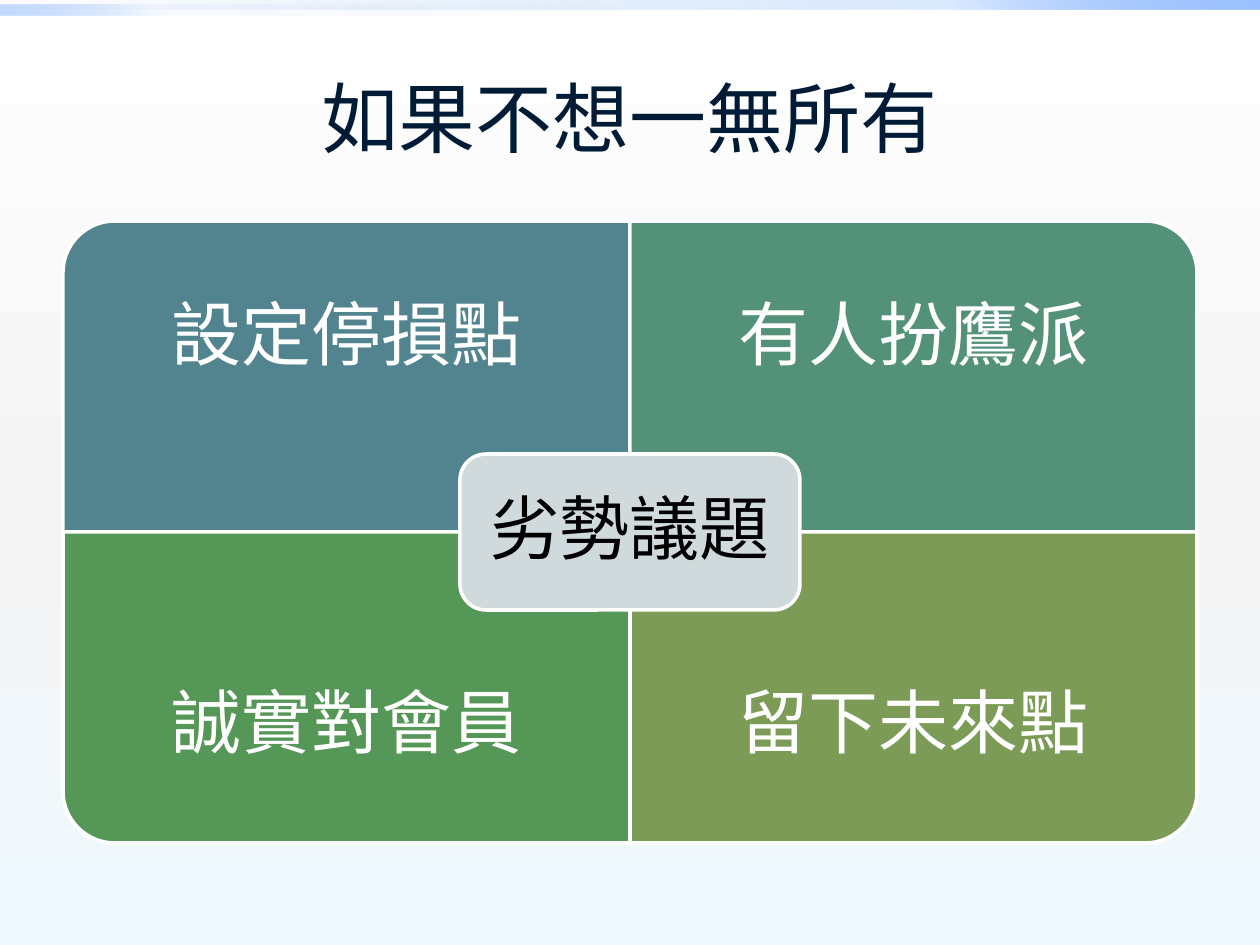
"""Build a slide with a titled four-quadrant matrix around a central topic."""
from lxml.etree import SubElement
from pptx import Presentation
from pptx.dml.color import RGBColor
from pptx.enum.shapes import MSO_SHAPE as SHAPE
from pptx.enum.text import MSO_ANCHOR as ANCHOR, PP_ALIGN as ALIGN
from pptx.oxml.ns import qn
from pptx.util import Pt

PX = 914400 // 126
WHITE = RGBColor(0xFF, 0xFF, 0xFF)
BLACK = RGBColor(0x00, 0x00, 0x00)
NAVY = RGBColor(0x00, 0x1B, 0x36)
GREY = RGBColor(0xF4, 0xF4, 0xF4)
ICE = RGBColor(0xEE, 0xF9, 0xFF)
DEEP = RGBColor(0x00, 0x58, 0xB7)
BLUE = RGBColor(0x4F, 0x95, 0xFF)
SKY = RGBColor(0x9E, 0xC2, 0xFF)
TEAL = RGBColor(0x51, 0x84, 0x8E)
SEA = RGBColor(0x53, 0x92, 0x79)
GREEN = RGBColor(0x55, 0x97, 0x57)
OLIVE = RGBColor(0x7B, 0x9B, 0x57)
SILVER = RGBColor(0xD0, 0xD9, 0xDB)

TITLE = "如果不想一無所有"
TOPIC = "劣勢議題"
QUADRANTS = [
    ("設定停損點", TEAL, 270),
    ("有人扮鷹派", SEA, 0),
    ("誠實對會員", GREEN, 180),
    ("留下未來點", OLIVE, 90),
]
BACKDROP = [(0, WHITE, 100), (55, GREY, 100), (100, ICE, 100)]
STRIPS = [
    ((0, 0, 1260, 10), [(0, DEEP, 0), (75, BLUE, 20), (100, SKY, 100)], 315),
    ((0, 5, 630, 10), [(0, DEEP, 0), (75, BLUE, 5), (100, SKY, 60)], 135),
]
LEFT, TOP, QUAD_W, QUAD_H = 63, 221, 567, 311
LABEL_H = 234
TOPIC_W, TOPIC_H = 340, 156


def emu(*lengths):
    return [round(length * PX) for length in lengths]


def set_gradient(fill, element, stops, angle):
    fill.gradient()
    grad = next(element.iter(qn("a:gradFill")))
    grad.find(qn("a:lin")).set("ang", str(angle * 60000))
    stop_list = grad.find(qn("a:gsLst"))
    stop_list.clear()
    for pos, color, alpha in stops:
        gs = SubElement(stop_list, qn("a:gs"), pos=str(pos * 1000))
        clr = SubElement(gs, qn("a:srgbClr"), val=str(color))
        SubElement(clr, qn("a:alpha"), val=str(alpha * 1000))


def add_block(s, kind, box, color, rotation=0):
    sp = s.shapes.add_shape(kind, *emu(*box))
    sp.shadow.inherit = False
    sp.rotation = rotation
    sp.fill.solid()
    sp.fill.fore_color.rgb = color
    sp.line.color.rgb = WHITE
    sp.line.width = Pt(2)
    return sp


def write(sp, text, font, size, color, inset, spacing):
    tf = sp.text_frame
    tf.word_wrap = True
    tf.vertical_anchor = ANCHOR.MIDDLE
    tf.margin_left = tf.margin_right = tf.margin_top = tf.margin_bottom = inset * PX
    tf.text = text
    p = tf.paragraphs[0]
    p.alignment = ALIGN.CENTER
    p.line_spacing = spacing
    r = p.runs[0]
    r.font.name = font
    r.font.size = Pt(size)
    r.font.color.rgb = color


def main():
    prs = Presentation()
    prs.slide_width, prs.slide_height = emu(1260, 945)
    s = prs.slides.add_slide(prs.slide_layouts[5])
    set_gradient(s.background.fill, s.element, BACKDROP, 90)

    for box, stops, angle in STRIPS:
        sp = s.shapes.add_shape(SHAPE.RECTANGLE, *emu(*box))
        sp.shadow.inherit = False
        sp.line.fill.background()
        set_gradient(sp.fill, sp.element, stops, angle)

    title = s.shapes.title
    title.left, title.top, title.width, title.height = emu(63, 38, 1134, 158)
    write(title, TITLE, "Lato", 44, NAVY, 6, 1.0)

    for i, (text, color, rotation) in enumerate(QUADRANTS):
        row, col = divmod(i, 2)
        x, y = LEFT + col * QUAD_W, TOP + row * QUAD_H
        w, h = (QUAD_H, QUAD_W) if rotation % 180 else (QUAD_W, QUAD_H)
        box = (x + (QUAD_W - w) / 2, y + (QUAD_H - h) / 2, w, h)
        add_block(s, SHAPE.ROUND_1_RECTANGLE, box, color, rotation)
        label_y = y + row * (QUAD_H - LABEL_H)
        label = s.shapes.add_textbox(*emu(x, label_y, QUAD_W, LABEL_H))
        write(label, text, "Cambria", 40, WHITE, 39, 0.9)

    box = (LEFT + QUAD_W - TOPIC_W / 2, TOP + QUAD_H - TOPIC_H / 2, TOPIC_W, TOPIC_H)
    topic = add_block(s, SHAPE.ROUNDED_RECTANGLE, box, SILVER)
    write(topic, TOPIC, "Cambria", 40, BLACK, 21, 0.9)
    prs.save("out.pptx")


if __name__ == "__main__":
    main()
